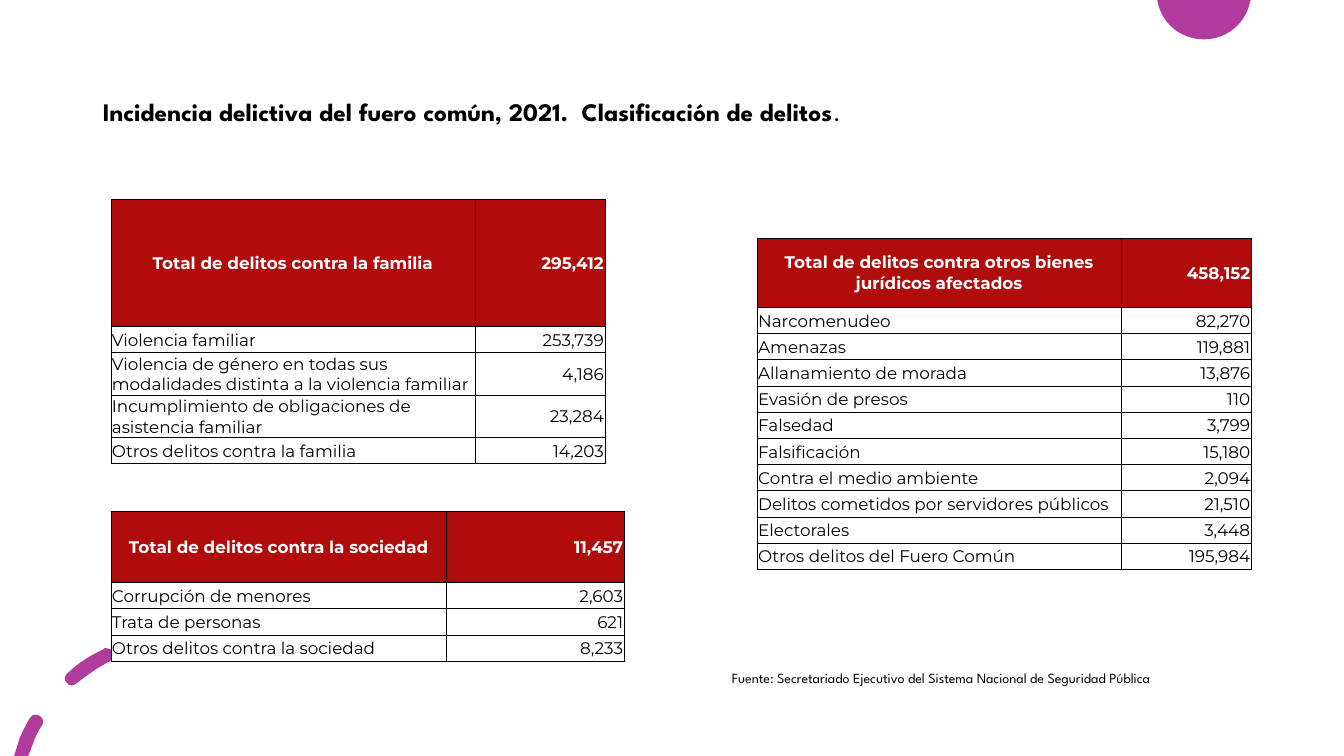
from dataclasses import dataclass

from lxml import etree
from pptx import Presentation
from pptx.dml.color import RGBColor
from pptx.enum.text import MSO_ANCHOR, MSO_AUTO_SIZE, PP_ALIGN
from pptx.oxml.ns import qn
from pptx.util import Inches, Pt

MIDDLE = MSO_ANCHOR.MIDDLE
LEFT, CENTER, RIGHT = PP_ALIGN.LEFT, PP_ALIGN.CENTER, PP_ALIGN.RIGHT
FIT_SHAPE = MSO_AUTO_SIZE.SHAPE_TO_FIT_TEXT
TITLE_ONLY = 5


@dataclass(frozen=True)
class Theme:
    purple: RGBColor = RGBColor(0xB1, 0x3B, 0x9D)
    red: RGBColor = RGBColor(0xB0, 0x0C, 0x0C)
    white: RGBColor = RGBColor(0xFF, 0xFF, 0xFF)
    black: RGBColor = RGBColor(0, 0, 0)
    display_font: str = "League Spartan"
    table_font: str = "Montserrat"
    title_size: Pt = Pt(18)
    table_size: Pt = Pt(12)
    source_size: Pt = Pt(10)
    border_width: Pt = Pt(0.5)


THEME = Theme()
ROW_HEIGHT, TWO_LINE_HEIGHT = 0.26, 0.42
LINE_LENGTH = 45

FAMILY = [
    ("Total de delitos contra la familia", "295,412"),
    ("Violencia familiar", "253,739"),
    ("Violencia de género en todas sus modalidades distinta a la violencia familiar", "4,186"),
    ("Incumplimiento de obligaciones de asistencia familiar", "23,284"),
    ("Otros delitos contra la familia", "14,203"),
]
SOCIETY = [
    ("Total de delitos contra la sociedad", "11,457"),
    ("Corrupción de menores", "2,603"),
    ("Trata de personas", "621"),
    ("Otros delitos contra la sociedad", "8,233"),
]
OTHER = [
    ("Total de delitos contra otros bienes jurídicos afectados", "458,152"),
    ("Narcomenudeo", "82,270"),
    ("Amenazas", "119,881"),
    ("Allanamiento de morada", "13,876"),
    ("Evasión de presos", "110"),
    ("Falsedad", "3,799"),
    ("Falsificación", "15,180"),
    ("Contra el medio ambiente", "2,094"),
    ("Delitos cometidos por servidores públicos", "21,510"),
    ("Electorales", "3,448"),
    ("Otros delitos del Fuero Común", "195,984"),
]

# Contours: a start point, then segments of one point (line) or three (curve).
DISC = [
    [(11.48, 0), [(12.41, 0)], [(12.4, 0.01)],
     [(12.36, 0.23), (12.17, 0.39), (11.94, 0.39)],
     [(11.71, 0.39), (11.52, 0.23), (11.48, 0.01)]],
]
DASHED_ARC = [
    [(0.36, 7.09), [(0.34, 7.08), (0.31, 7.1), (0.3, 7.12)],
     [(0.26, 7.18), (0.23, 7.25), (0.2, 7.31)], [(0.14, 7.5)],
     [(0.28, 7.5)], [(0.33, 7.37)],
     [(0.35, 7.31), (0.38, 7.25), (0.42, 7.19)],
     [(0.44, 7.16), (0.42, 7.11), (0.39, 7.1)],
     [(0.38, 7.09), (0.37, 7.09), (0.36, 7.09)]],
    [(1.05, 6.43), [(1.04, 6.43), (1.03, 6.43), (1.03, 6.44)],
     [(0.9, 6.5), (0.77, 6.58), (0.67, 6.68)],
     [(0.64, 6.7), (0.63, 6.75), (0.66, 6.77)],
     [(0.67, 6.79), (0.69, 6.8), (0.71, 6.8)], [(0.71, 6.8)],
     [(0.73, 6.8), (0.74, 6.79), (0.76, 6.78)],
     [(0.86, 6.7), (0.97, 6.62), (1.09, 6.56)],
     [(1.12, 6.54), (1.14, 6.5), (1.12, 6.47)],
     [(1.11, 6.44), (1.08, 6.43), (1.05, 6.43)]],
    [(1.79, 6.25), [(1.72, 6.25), (1.65, 6.26), (1.58, 6.27)],
     [(1.54, 6.27), (1.51, 6.31), (1.52, 6.35)],
     [(1.52, 6.38), (1.55, 6.41), (1.58, 6.41)],
     [(1.59, 6.41), (1.59, 6.41), (1.59, 6.41)],
     [(1.73, 6.39), (1.86, 6.39), (1.99, 6.4)],
     [(2.03, 6.41), (2.07, 6.38), (2.07, 6.35)],
     [(2.08, 6.31), (2.05, 6.27), (2.01, 6.27)],
     [(2.01, 6.27), (2.01, 6.27), (2.01, 6.27)],
     [(1.94, 6.26), (1.86, 6.25), (1.79, 6.25)]],
]


def to_emu(point):
    return tuple(Inches(v) for v in point)


def bend_segments(sp, segments):
    """Turn each run of three lines that stands for a curve into one curve."""
    lines = iter(list(sp._element.iter(qn("a:lnTo"))))
    for segment in segments:
        first, *rest = [next(lines) for _ in segment]
        if rest:
            first.tag = qn("a:cubicBezTo")
        for line in rest:
            first.append(line[0])
            line.getparent().remove(line)


def add_outline(s, contours):
    builder = s.shapes.build_freeform(*to_emu(contours[0][0]))
    for i, (start, *segments) in enumerate(contours):
        if i:
            builder.move_to(*to_emu(start))
        builder.add_line_segments([to_emu(p) for seg in segments for p in seg], close=True)
    sp = builder.convert_to_shape()
    bend_segments(sp, [seg for contour in contours for seg in contour[1:]])
    sp.fill.solid()
    sp.fill.fore_color.rgb = THEME.purple
    sp.line.fill.background()
    sp.shadow.inherit = False


def style_font(font, name, size, color, bold=False):
    font.name, font.size, font.bold = name, size, bold
    font.color.rgb = color


def set_borders(cell):
    tc_pr = cell._tc.get_or_add_tcPr()
    for i, side in enumerate(("lnL", "lnR", "lnT", "lnB")):
        ln = etree.Element(qn(f"a:{side}"), w=str(THEME.border_width))
        fill = etree.SubElement(ln, qn("a:solidFill"))
        etree.SubElement(fill, qn("a:srgbClr"), val=str(THEME.black))
        tc_pr.insert(i, ln)


def fill_cell(cell, text, align, header):
    cell.margin_left = cell.margin_right = cell.margin_top = Inches(0.01)
    cell.margin_bottom = 0
    cell.vertical_anchor = MIDDLE
    cell.fill.solid()
    cell.fill.fore_color.rgb = THEME.red if header else THEME.white
    set_borders(cell)
    p = cell.text_frame.paragraphs[0]
    p.text, p.alignment = text, align
    style_font(p.font, THEME.table_font, THEME.table_size,
               THEME.white if header else THEME.black, header)


def add_crime_table(s, left, top, widths, header_height, rows):
    heights = [header_height] + [TWO_LINE_HEIGHT if len(label) > LINE_LENGTH else ROW_HEIGHT
                                 for label, _ in rows[1:]]
    table = s.shapes.add_table(len(rows), len(widths), Inches(left), Inches(top),
                               Inches(sum(widths)), Inches(sum(heights))).table
    table.horz_banding = False
    for column, width in zip(table.columns, widths):
        column.width = Inches(width)
    for i, (label, total) in enumerate(rows):
        header = i == 0
        table.rows[i].height = Inches(heights[i])
        fill_cell(table.cell(i, 0), label, CENTER if header else LEFT, header)
        fill_cell(table.cell(i, 1), total, RIGHT, header)


def set_title(s, text, ending):
    """Bold title text followed by a regular-weight ending."""
    title = s.shapes.title
    title.left, title.top = Inches(0.92), Inches(0.94)
    title.width, title.height = Inches(11.5), Inches(0.37)
    tf = title.text_frame
    tf.word_wrap, tf.auto_size, tf.vertical_anchor = True, FIT_SHAPE, MIDDLE
    p = tf.paragraphs[0]
    p.alignment, p.line_spacing = LEFT, 0.9
    for part, bold in ((text, True), (ending, False)):
        r = p.add_run()
        r.text = part
        style_font(r.font, THEME.display_font, THEME.title_size, THEME.black, bold)


def add_source(s, text):
    tf = s.shapes.add_textbox(Inches(7.16), Inches(6.59),
                              Inches(6.67), Inches(0.27)).text_frame
    tf.word_wrap, tf.auto_size = True, FIT_SHAPE
    p = tf.paragraphs[0]
    p.text = text
    style_font(p.font, THEME.display_font, THEME.source_size, THEME.black)


def main():
    prs = Presentation()
    prs.slide_width, prs.slide_height = Inches(13.33), Inches(7.5)
    s = prs.slides.add_slide(prs.slide_layouts[TITLE_ONLY])
    for contours in (DISC, DASHED_ARC):
        add_outline(s, contours)
    add_crime_table(s, 1.1, 1.98, (3.61, 1.29), 1.26, FAMILY)
    add_crime_table(s, 1.1, 5.07, (3.33, 1.76), 0.71, SOCIETY)
    add_crime_table(s, 7.51, 2.36, (3.61, 1.29), 0.69, OTHER)
    set_title(s, "Incidencia delictiva del fuero común, 2021.  Clasificación de delitos", ".")
    add_source(s, "Fuente: Secretariado Ejecutivo del Sistema Nacional de Seguridad Pública")
    prs.save("out.pptx")


if __name__ == "__main__":
    main()
